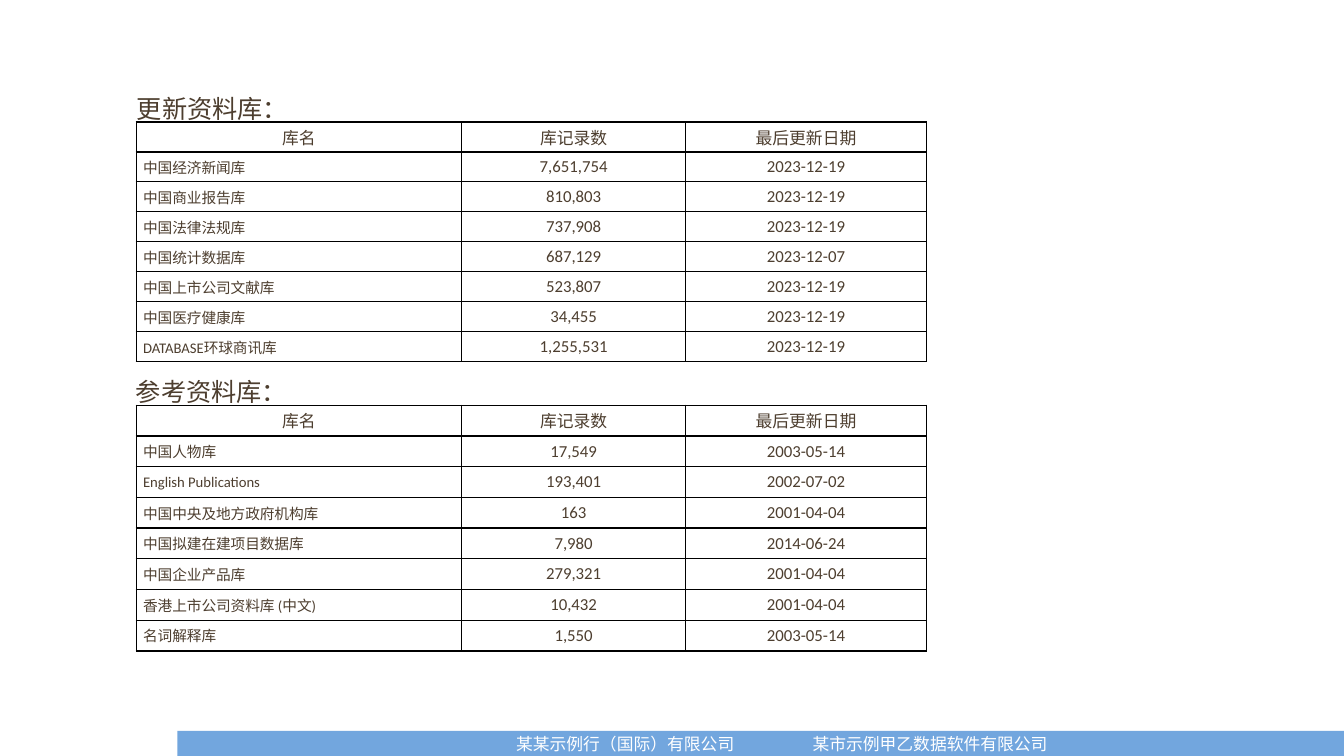
from dataclasses import dataclass

from lxml.etree import SubElement
from pptx import Presentation
from pptx.dml.color import RGBColor
from pptx.enum.shapes import MSO_SHAPE
from pptx.enum.text import MSO_ANCHOR, PP_ALIGN
from pptx.oxml.ns import qn
from pptx.slide import Slide
from pptx.table import _Cell as Cell
from pptx.text.text import _Paragraph as Paragraph
from pptx.util import Inches, Pt

COLORS = {"text": "4D3E2F", "border": "000000", "bar": "72A6DE", "footer": "FFFFFF"}
LATIN, CJK = "Calibri", "Noto Sans CJK SC"
HEADER = ("库名", "库记录数", "最后更新日期")
COL_WIDTHS = (3.23, 2.22, 2.39)
TABLE_LEFT = 1.35


@dataclass
class Library:
    title: str
    title_left: float
    title_top: float
    table_top: float
    table_height: float
    rows: list[tuple[str, str, str]]


LIBRARIES = [
    Library("更新资料库：", 1.26, 0.88, 1.21, 2.38, [
        ("中国经济新闻库", "7,651,754", "2023-12-19"),
        ("中国商业报告库", "810,803", "2023-12-19"),
        ("中国法律法规库", "737,908", "2023-12-19"),
        ("中国统计数据库", "687,129", "2023-12-07"),
        ("中国上市公司文献库", "523,807", "2023-12-19"),
        ("中国医疗健康库", "34,455", "2023-12-19"),
        ("DATABASE环球商讯库", "1,255,531", "2023-12-19"),
    ]),
    Library("参考资料库：", 1.25, 3.68, 4.02, 2.44, [
        ("中国人物库", "17,549", "2003-05-14"),
        ("English Publications", "193,401", "2002-07-02"),
        ("中国中央及地方政府机构库", "163", "2001-04-04"),
        ("中国拟建在建项目数据库", "7,980", "2014-06-24"),
        ("中国企业产品库", "279,321", "2001-04-04"),
        ("香港上市公司资料库 (中文)", "10,432", "2001-04-04"),
        ("名词解释库", "1,550", "2003-05-14"),
    ]),
]


def style_runs(p: Paragraph, size: float, color: str, latin: str = LATIN) -> None:
    for r in p.runs:
        r.font.size = Pt(size)
        r.font.name = latin
        r.font.color.rgb = RGBColor.from_string(COLORS[color])
        SubElement(r.font._element, qn("a:ea"), typeface=CJK)


def add_text(s: Slide, text: str, left: float, top: float, width: float, height: float,
             size: float, color: str, latin: str = LATIN) -> Paragraph:
    tf = s.shapes.add_textbox(Inches(left), Inches(top), Inches(width), Inches(height)).text_frame
    tf.word_wrap = True
    tf.text = text
    p = tf.paragraphs[0]
    style_runs(p, size, color, latin)
    return p


def add_borders(cell: Cell) -> None:
    """Draw the four sides; they must precede the fill in the cell properties."""
    tc_pr = cell._tc.get_or_add_tcPr()
    for side in ("lnL", "lnR", "lnT", "lnB"):
        line = SubElement(tc_pr, qn(f"a:{side}"), w=str(Pt(1)))
        fill = SubElement(line, qn("a:solidFill"))
        SubElement(fill, qn("a:srgbClr"), val=COLORS["border"])


def fill_cell(cell: Cell, text: str, size: float, align: PP_ALIGN) -> None:
    cell.text = text
    cell.vertical_anchor = MSO_ANCHOR.MIDDLE
    cell.margin_left = cell.margin_right = Inches(0.07)
    cell.margin_top = cell.margin_bottom = 0
    add_borders(cell)
    cell.fill.background()
    p = cell.text_frame.paragraphs[0]
    p.alignment = align
    style_runs(p, size, "text")


def add_library(s: Slide, library: Library) -> None:
    rows = [HEADER, *library.rows]
    table = s.shapes.add_table(
        len(rows), len(HEADER), Inches(TABLE_LEFT), Inches(library.table_top),
        Inches(sum(COL_WIDTHS)), Inches(library.table_height)).table
    table.first_row = table.horz_banding = False
    for column, width in zip(table.columns, COL_WIDTHS):
        column.width = Inches(width)
    for i, row in enumerate(rows):
        for j, text in enumerate(row):
            is_name = i > 0 and j == 0
            fill_cell(table.cell(i, j), text, 10.5 if is_name else 12,
                      PP_ALIGN.JUSTIFY if is_name else PP_ALIGN.CENTER)
    add_text(s, library.title, library.title_left, library.title_top, 2.44, 0.71, 18, "text")


def add_footer(s: Slide) -> None:
    bar = s.shapes.add_shape(MSO_SHAPE.RECTANGLE, Inches(1.76), Inches(7.25),
                             Inches(11.57), Inches(0.25))
    bar.shadow.inherit = False
    bar.fill.solid()
    bar.fill.fore_color.rgb = RGBColor.from_string(COLORS["bar"])
    bar.line.fill.background()
    p = add_text(s, "某某示例行（国际）有限公司\t某市示例甲乙数据软件有限公司",
                 5.02, 7.23, 5.98, 0.3, 12, "footer", CJK)
    tabs = SubElement(p._p.get_or_add_pPr(), qn("a:tabLst"))
    SubElement(tabs, qn("a:tab"), pos=str(Inches(2.94)), algn="l")


def main() -> None:
    prs = Presentation()
    prs.slide_width, prs.slide_height = Inches(13.33), Inches(7.5)
    s = prs.slides.add_slide(prs.slide_layouts[6])
    add_footer(s)
    for library in LIBRARIES:
        add_library(s, library)
    prs.save("out.pptx")


if __name__ == "__main__":
    main()
